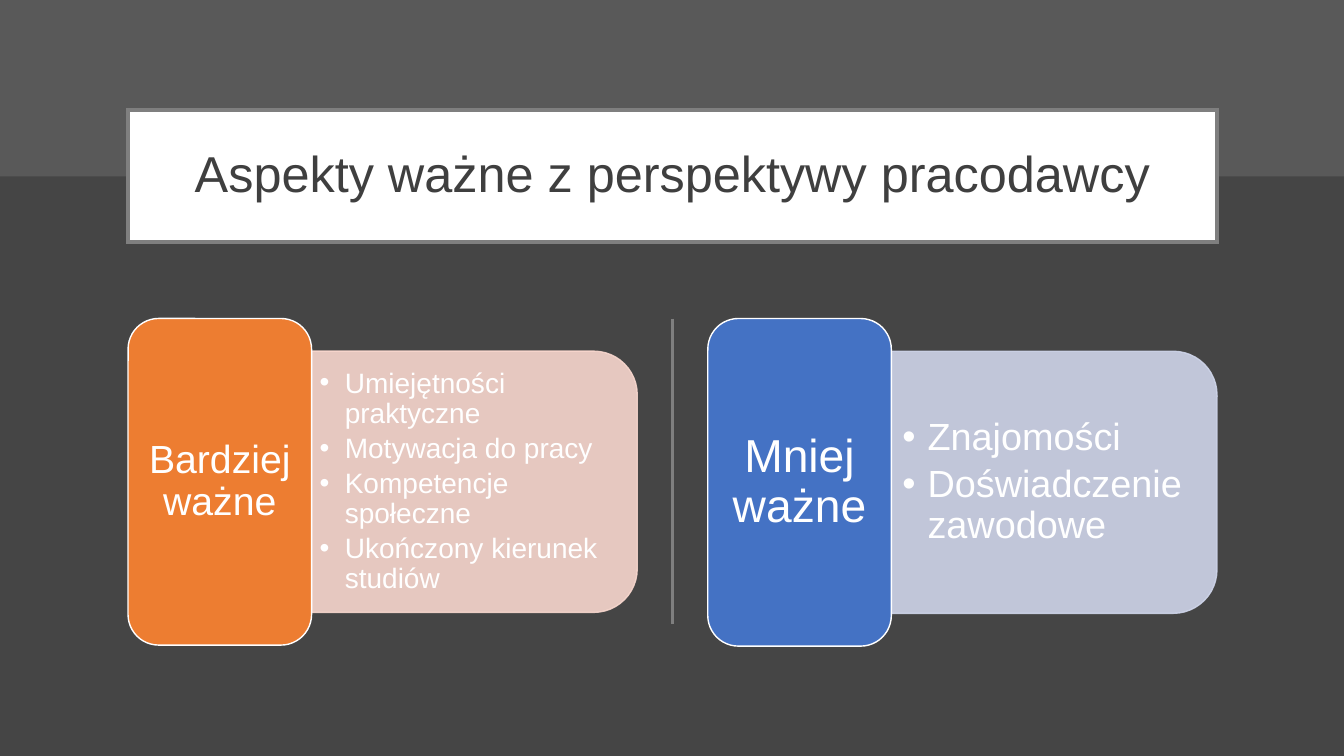
from lxml.etree import SubElement
from pptx import Presentation
from pptx.dml.color import RGBColor
from pptx.enum.shapes import MSO_CONNECTOR as LINK, MSO_SHAPE as SHAPE
from pptx.enum.text import MSO_ANCHOR as ANCHOR, PP_ALIGN as ALIGN
from pptx.oxml.ns import qn
from pptx.util import Inches, Pt

# Content
TITLE = "Aspekty ważne z perspektywy pracodawcy"
GROUPS = [
    dict(left=1.27, high=3.24, fill="ED7D31", tint="F8D7CE",
         head="Bardziej ważne", head_size=28, size=20, pad=0.08,
         items=["Umiejętności praktyczne", "Motywacja do pracy",
                "Kompetencje społeczne", "Ukończony kierunek studiów"]),
    dict(left=7.02, high=3.25, fill="4472C4", tint="CFD5EA",
         head="Mniej ważne", head_size=33, size=27, pad=0.11,
         items=["Znajomości", "Doświadczenie zawodowe"]),
]
WHITE, GREY = "FFFFFF", "7F7F7F"
WIDE, TALL = 13.33, 7.5
TOP, TAB, PANEL = 3.16, 1.82, 3.23  # group top, tab width, panel width
HEAD_PAD = 0.08  # narrow enough for the longest heading word

prs = Presentation()
prs.slide_width, prs.slide_height = Inches(WIDE), Inches(TALL)
slide = prs.slides.add_slide(prs.slide_layouts[6])


def paint(fmt, color, alpha=None):
    """Set a solid colour on a fill, with an optional opacity in percent."""
    fmt.solid()
    fmt.fore_color.rgb = RGBColor.from_string(color)
    if alpha:
        node = fmt._xPr.find(qn("a:solidFill"))[0]
        SubElement(node, qn("a:alpha"), val=str(alpha * 1000))


def add_box(kind, box, fill, line=None, width=1, alpha=None):
    shape = slide.shapes.add_shape(kind, *map(Inches, box))
    shape.shadow.inherit = False
    paint(shape.fill, fill, alpha)
    if line:
        paint(shape.line.fill, line, alpha)
        shape.line.width = Pt(width)
        SubElement(shape.line._ln, qn("a:miter"), lim="800000")
    else:
        shape.line.fill.background()
    return shape


def add_text(shape, lines, size, color, pad, bullet=False):
    frame = shape.text_frame
    look = dict(word_wrap=True, vertical_anchor=ANCHOR.MIDDLE,
                margin_left=Inches(pad), margin_right=Inches(pad),
                margin_top=Inches(pad / 2), margin_bottom=Inches(pad / 2))
    for name, value in look.items():
        setattr(frame, name, value)
    for i, line in enumerate(lines):
        para = frame.paragraphs[0] if i == 0 else frame.add_paragraph()
        para.line_spacing = 0.9
        para.alignment = ALIGN.LEFT if bullet else ALIGN.CENTER
        run = para.add_run()
        run.text = line
        for name, value in dict(name="Arial", size=Pt(size)).items():
            setattr(run.font, name, value)
        paint(run.font.fill, color)
        if bullet:
            para.space_after = Pt(round(size * 0.17, 1))
            props = para._p.get_or_add_pPr()
            props.set("marL", str(Inches(0.25)))
            props.set("indent", str(Inches(-0.25)))
            SubElement(props, qn("a:buFont"), typeface="Arial")
            SubElement(props, qn("a:buChar"), char="•")


def add_label(box, *args, **kw):
    add_text(slide.shapes.add_textbox(*map(Inches, box)), *args, **kw)


def add_group(g):
    left, high = g["left"], g["high"]
    # Panel: a shape turned a quarter, so its frame is swapped about its centre
    edge, deep = left + TAB, high * 0.8
    mid = TOP + high / 2
    panel = add_box(SHAPE.ROUND_2_SAME_RECTANGLE,
                    (edge + (PANEL - deep) / 2, mid - PANEL / 2, deep, PANEL),
                    g["tint"], g["tint"], alpha=90)
    panel.rotation = 90
    add_label((edge, mid - 1.17, 3.1, 2.34), g["items"], g["size"], WHITE,
              g["pad"], bullet=True)
    # Tab with its heading
    add_box(SHAPE.ROUNDED_RECTANGLE, (left, TOP, TAB, high), g["fill"], WHITE)
    add_label((left + 0.09, TOP + 0.09, TAB - 0.18, high - 0.18),
              [g["head"]], g["head_size"], WHITE, HEAD_PAD)


# Background and title
paint(slide.background.fill, "454545")
add_box(SHAPE.RECTANGLE, (0, 0, WIDE, 1.75), "595959")
title = add_box(SHAPE.RECTANGLE, (1.27, 1.09, 10.8, 1.31), WHITE, GREY, 3)
add_text(title, [TITLE], 36, "3F3F3F", 0.1)

# Groups
for group in GROUPS:
    add_group(group)

# Divider
rule = slide.shapes.add_connector(
    LINK.STRAIGHT, *map(Inches, (6.67, TOP, 6.67, 6.19)))
paint(rule.line.fill, GREY)
rule.line.width = Pt(1.5)
SubElement(rule._element.spPr, qn("a:effectLst"))

prs.save("out.pptx")
